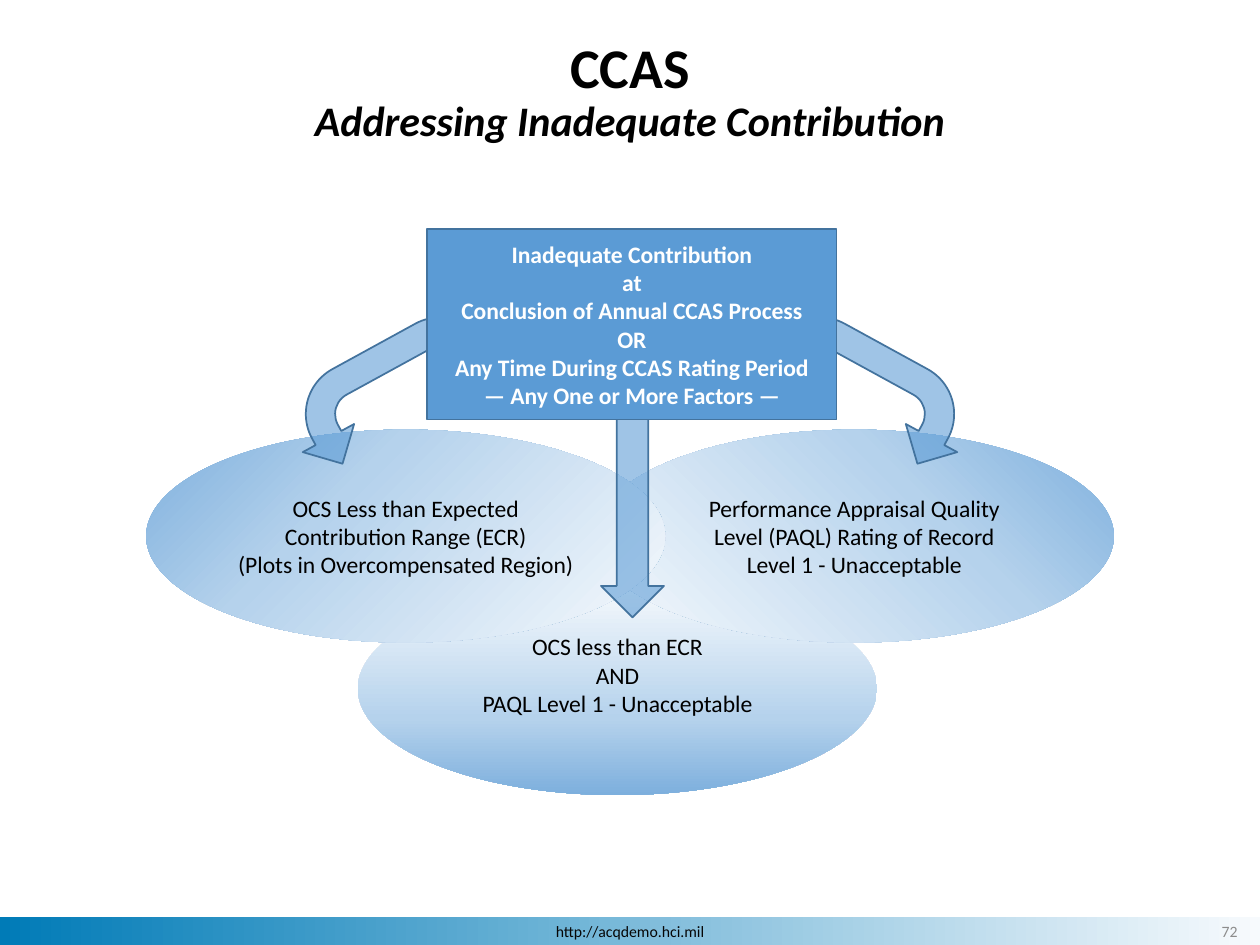
from lxml import etree
from pptx import Presentation
from pptx.dml.color import RGBColor
from pptx.enum.shapes import MSO_SHAPE
from pptx.enum.text import MSO_ANCHOR, MSO_AUTO_SIZE, PP_ALIGN
from pptx.oxml.ns import qn
from pptx.util import Inches, Pt

RECT, OVAL = MSO_SHAPE.RECTANGLE, MSO_SHAPE.OVAL
DOWN, UTURN = MSO_SHAPE.DOWN_ARROW, MSO_SHAPE.U_TURN_ARROW
MIDDLE, NO_FIT = MSO_ANCHOR.MIDDLE, MSO_AUTO_SIZE.NONE
CENTER, RIGHT = PP_ALIGN.CENTER, PP_ALIGN.RIGHT

FONT = "Calibri"
WIDE, HIGH = 10, 7.5
BAR = 0.22
OVAL_SIZE = (4.12, 1.69)
TURN_SIZE = (1.68, 0.93)
COLORS = {
    "blue": "5B9BD5", "edge": "43739E", "pale": "F7FAFD", "sky": "B5D2EC",
    "deep": "7DAFDD", "bar": "007BB7", "ink": "000000", "white": "FFFFFF",
    "foot": "060606", "gray": "8C8C8C",
}
OVAL_STOPS = [(0, "pale"), (64, "sky"), (100, "deep")]
BAR_STOPS = [(0, "pale"), (100, "bar")]


def color(name):
    return RGBColor.from_string(COLORS[name])


def node(parent, tag, **attrs):
    return etree.SubElement(parent, qn(tag), {k: str(v) for k, v in attrs.items()})


def add_shape(shapes, kind, left, top, width, height):
    shape = shapes.add_shape(kind, *map(Inches, (left, top, width, height)))
    shape.shadow.inherit = False
    shape.line.fill.background()
    return shape


def fill_grad(shape, stops, angle=None, focus=None):
    """Linear fill at an angle, or round fill towards the focus sides."""
    shape.fill.background()
    props = shape.fill._xPr
    blank = props.find(qn("a:noFill"))
    grad = etree.Element(qn("a:gradFill"), rotWithShape="1")
    stop_list = node(grad, "a:gsLst")
    for pos, name in stops:
        node(node(stop_list, "a:gs", pos=pos * 1000), "a:srgbClr", val=COLORS[name])
    if focus:
        way = node(grad, "a:path", **{"path": "circle"})
        node(way, "a:fillToRect", **{side: 100000 for side in focus})
    else:
        node(grad, "a:lin", ang=angle * 60000, scaled=0)
    props.replace(blank, grad)


def fill_blue(shape, alpha=100):
    shape.fill.solid()
    shape.fill.fore_color.rgb = color("blue")
    shape.line.color.rgb = color("edge")
    shape.line.width = Pt(1)
    if alpha < 100:
        tint = shape.fill._xPr.find(qn("a:solidFill"))[0]
        node(tint, "a:alpha", val=alpha * 1000)


def write(shape, lines, size, name, bold=False, align=CENTER):
    frame = shape.text_frame
    frame.word_wrap = True
    frame.vertical_anchor = MIDDLE
    frame.text = "\n".join(lines)
    for para in frame.paragraphs:
        para.alignment = align
        font = para.font
        font.name, font.size, font.bold = FONT, Pt(size), bold
        font.color.rgb = color(name)
    return frame


def add_oval(shapes, left, top, lines, side=0.1, below=0.05, **grad):
    oval = add_shape(shapes, OVAL, left, top, *OVAL_SIZE)
    fill_grad(oval, OVAL_STOPS, **grad)
    frame = write(oval, lines, 13.5, "ink")
    frame.margin_left = frame.margin_right = Inches(side)
    frame.margin_bottom = Inches(below)


def add_arrow(shapes, kind, left, top, size, turn=0, flip=False):
    arrow = add_shape(shapes, kind, left, top, *size)
    fill_blue(arrow, 58)
    arrow.rotation = turn
    if flip:
        arrow._element.spPr.find(qn("a:xfrm")).set("flipH", "1")


def add_title(slide):
    title = slide.shapes.title
    title.left, title.top = 0, Inches(0.3)
    title.width, title.height = Inches(WIDE), Inches(0.87)
    frame = title.text_frame
    frame.auto_size, frame.word_wrap = NO_FIT, True
    frame.vertical_anchor = MIDDLE
    frame.margin_left = frame.margin_right = Inches(0.07)
    frame.margin_top = frame.margin_bottom = Inches(0.04)
    para = frame.paragraphs[0]
    para.alignment, para.line_spacing = CENTER, 0.9
    para.font.name, para.font.bold = FONT, True
    para.font.color.rgb = color("ink")
    head = para.add_run()
    head.text, head.font.size = "CCAS", Pt(32)
    para.add_line_break()
    sub = para.add_run()
    sub.text, sub.font.size = "Addressing Inadequate Contribution", Pt(24)
    sub.font.italic = True


def add_footer(slide):
    top = HIGH - BAR
    bar = add_shape(slide.shapes, RECT, 0, top, WIDE, BAR)
    fill_grad(bar, BAR_STOPS, angle=180)
    write(bar, ["http://acqdemo.hci.mil"], 9, "foot")
    page = slide.shapes.add_textbox(*map(Inches, (7.67, top, 2.25, BAR)))
    write(page, ["72"], 9, "gray", align=RIGHT)


def main():
    deck = Presentation()
    deck.slide_width, deck.slide_height = Inches(WIDE), Inches(HIGH)
    slide = deck.slides.add_slide(deck.slide_layouts[5])
    add_footer(slide)

    # Overlapping outcomes
    ovals = slide.shapes.add_group_shape().shapes
    add_oval(ovals, 2.84, 4.62,
             ["OCS less than ECR", "AND", "PAQL Level 1 - Unacceptable"],
             below=0.27, angle=90)
    add_oval(ovals, 4.72, 3.41,
             ["Performance Appraisal Quality Level (PAQL) Rating of Record",
              "Level 1 - Unacceptable"], side=0.15, focus="tr")
    add_oval(ovals, 1.16, 3.41,
             ["OCS Less than Expected Contribution Range (ECR)",
              "(Plots in Overcompensated Region)"], focus="lt")

    # Cause box, in front of its three arrows
    cause = slide.shapes.add_group_shape().shapes
    add_arrow(cause, DOWN, 4.77, 3.21, (0.5, 1.69))
    add_arrow(cause, UTURN, 6.02, 2.72, TURN_SIZE, 28.7)
    add_arrow(cause, UTURN, 2.3, 2.72, TURN_SIZE, -28.7, flip=True)
    box = add_shape(cause, RECT, 3.39, 1.82, 3.25, 1.51)
    fill_blue(box)
    write(box, ["Inadequate Contribution", "at",
                "Conclusion of Annual CCAS Process", "OR",
                "Any Time During CCAS Rating Period",
                "— Any One or More Factors —"], 13.5, "white", bold=True)

    add_title(slide)
    deck.save("out.pptx")


if __name__ == "__main__":
    main()
